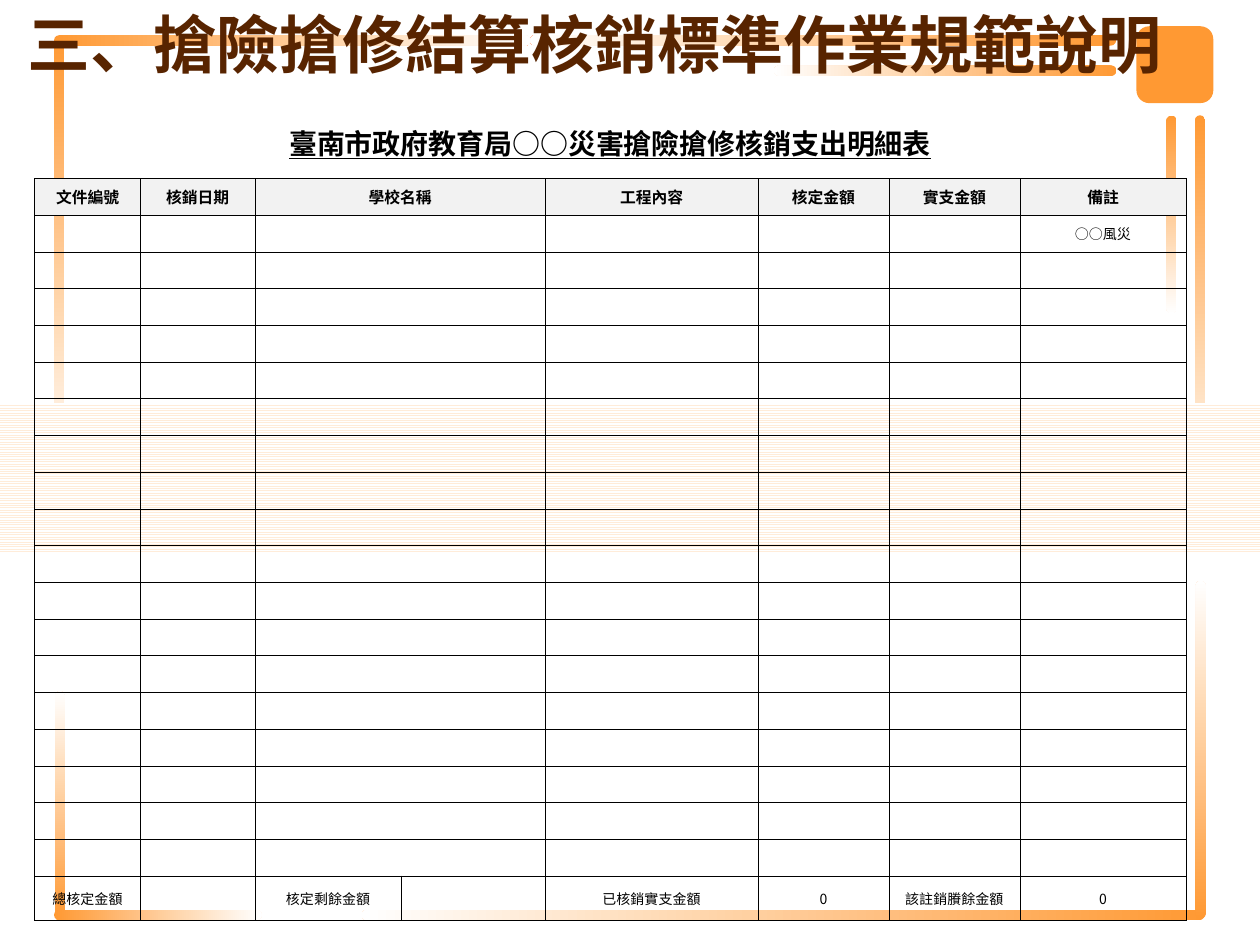
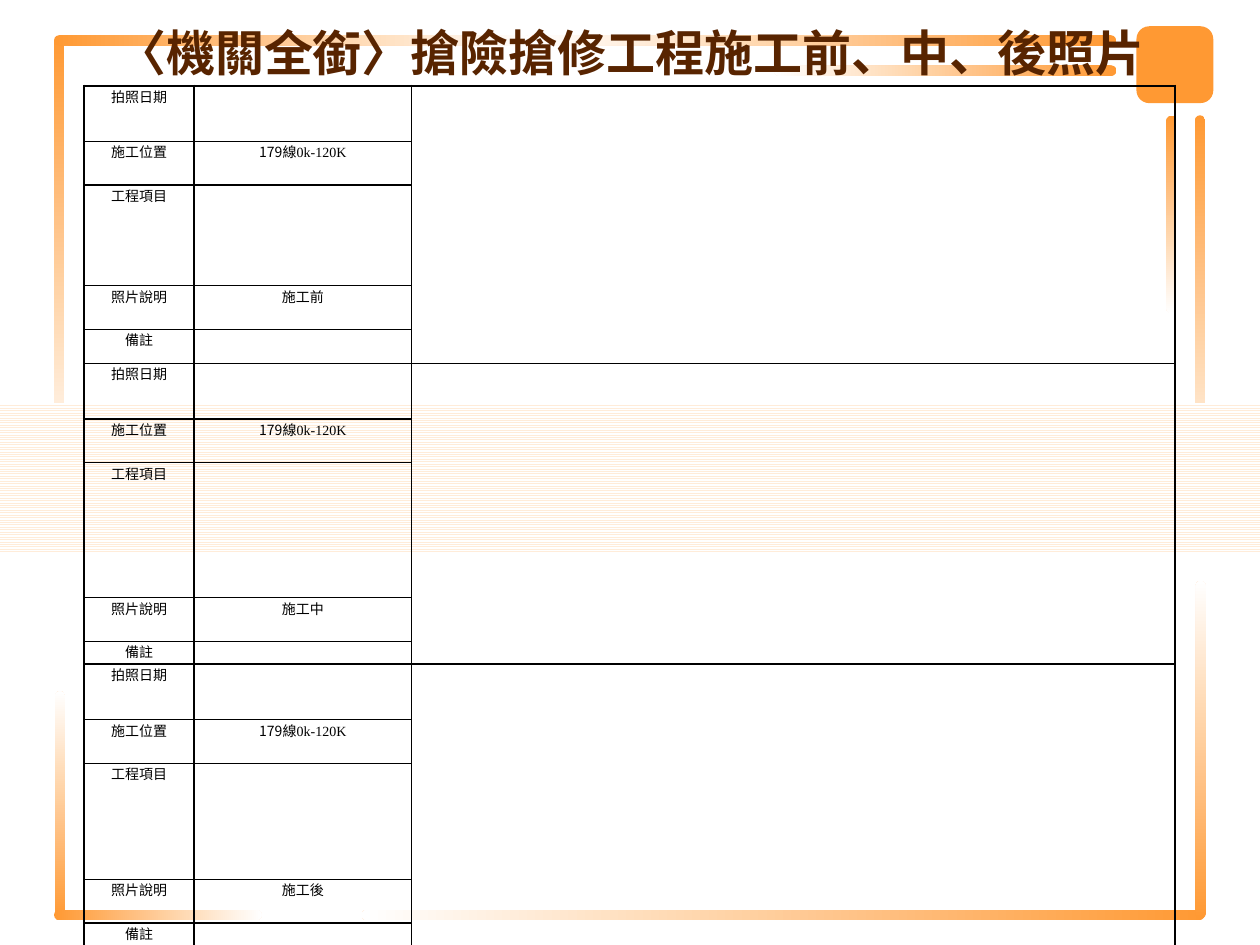
from lxml import etree
from pptx import Presentation
from pptx.dml.color import RGBColor
from pptx.enum.dml import MSO_PATTERN
from pptx.enum.shapes import MSO_SHAPE
from pptx.enum.text import MSO_ANCHOR, MSO_AUTO_SIZE, PP_ALIGN
from pptx.oxml.ns import qn
from pptx.util import Cm, Pt

ROUNDED, RECTANGLE = MSO_SHAPE.ROUNDED_RECTANGLE, MSO_SHAPE.RECTANGLE
LIGHT_HORIZONTAL = MSO_PATTERN.LIGHT_HORIZONTAL
MIDDLE, TOP = MSO_ANCHOR.MIDDLE, MSO_ANCHOR.TOP
LEFT, CENTER = PP_ALIGN.LEFT, PP_ALIGN.CENTER
NO_AUTOFIT = MSO_AUTO_SIZE.NONE

color = RGBColor.from_string
ORANGE, PALE_ORANGE, WHITE = "FF9933", "FFECD9", "FFFFFF"
BROWN, BLACK, HEADER_GRAY = "582400", "000000", "F2F2F2"
SANS, LATIN, SERIF = "Noto Sans CJK SC", "Arial", "Times New Roman"


def write(paragraph, text, size, name, ink=BLACK, bold=False, align=CENTER):
    if text:
        paragraph.add_run().text = text
    paragraph.alignment = align
    paragraph.font.size = Pt(size)
    paragraph.font.name = name
    paragraph.font.bold = bold
    paragraph.font.color.rgb = color(ink)
    etree.SubElement(paragraph._p, qn("a:endParaRPr"), sz=str(size * 100))


def add_grid(page, left, top, widths, heights, inner, outer, margin):
    frame = page.shapes.add_table(len(heights), len(widths), Cm(left), Cm(top),
                                  Cm(sum(widths)), Cm(sum(heights)))
    table = frame.table
    table.first_row = table.horz_banding = False
    for column, width in zip(table.columns, widths):
        column.width = Cm(width)
    for i, height in enumerate(heights):
        table.rows[i].height = Cm(height)
        for j in range(len(widths)):
            cell = table.cell(i, j)
            cell.margin_left = cell.margin_right = Cm(margin)
            cell.margin_top = cell.margin_bottom = 0
            on_edge = {"L": j == 0, "R": j == len(widths) - 1,
                       "T": i == 0, "B": i == len(heights) - 1}
            for side, is_outer in on_edge.items():
                line = etree.SubElement(cell._tc.get_or_add_tcPr(), qn(f"a:ln{side}"),
                                        w=str(Pt(outer if is_outer else inner)))
                solid = etree.SubElement(line, qn("a:solidFill"))
                etree.SubElement(solid, qn("a:srgbClr"), val=BLACK)
            cell.fill.background()
    return table


deck = Presentation()
deck.slide_width, deck.slide_height = Cm(25.4), Cm(19.05)
report_page = deck.slides.add_slide(deck.slide_layouts[5])
photo_page = deck.slides.add_slide(deck.slide_layouts[1])

# left, top, length, rotation
bars = [
    (-3.3, 5.13, 8.99, 90),
    (20.19, 6.22, 8, 90),
    (21.62, 4.22, 3.99, 90),
    (10.69, 0.71, 11.81, 180),
    (15.6, 1.32, 6.91, 180),
    (1.09, 0.71, 9.6, 0),
    (7.29, 18.34, 16.99, 180),
    (20.8, 15.01, 6.81, 270),
    (-1.09, 16.13, 4.6, 270),
    (1.09, 18.34, 4.19, 0),
]
decorations = []
for left, top, length, rotation in bars:
    bar = report_page.shapes.add_shape(ROUNDED, Cm(left), Cm(top), Cm(length), Cm(0.21))
    bar.adjustments[0] = 0.5
    bar.rotation = rotation
    bar.fill.gradient()
    bar.fill.gradient_angle = 0
    for stop, shade in zip(bar.fill.gradient_stops, (ORANGE, WHITE)):
        stop.color.rgb = color(shade)
    decorations.append(bar)

band = report_page.shapes.add_shape(RECTANGLE, 0, Cm(8.13), deck.slide_width, Cm(3))
band.fill.patterned()
band.fill.pattern = LIGHT_HORIZONTAL
band.fill.fore_color.rgb = color(PALE_ORANGE)
band.fill.back_color.rgb = color(WHITE)
corner = report_page.shapes.add_shape(ROUNDED, Cm(22.91), Cm(0.53), Cm(1.55), Cm(1.55))
corner.fill.solid()
corner.fill.fore_color.rgb = color(ORANGE)
decorations += [band, corner]

master_tree = deck.slide_master.shapes.element
for position, shape in enumerate(decorations, start=2):
    shape.line.fill.background()
    shape.shadow.inherit = False
    master_tree.insert(position, shape.element)

title = report_page.shapes.title
title.left, title.top, title.width, title.height = Cm(0.3), 0, Cm(24.8), Cm(1.73)
title.text_frame.auto_size = NO_AUTOFIT
title.text_frame.vertical_anchor = MIDDLE
write(title.text_frame.paragraphs[0], "三、搶險搶修結算核銷標準作業規範說明",
      36, SANS, BROWN, True, LEFT)

expense_rows = [["臺南市政府教育局○○災害搶險搶修核銷支出明細表"] + [""] * 7,
                ["文件編號", "核銷日期", "學校名稱", "", "工程內容", "核定金額", "實支金額", "備註"],
                [""] * 7 + ["○○風災"]]
expense_rows += [[""] * 8 for _ in range(17)]
expense_rows.append(["總核定金額", "", "核定剩餘金額", "", "已核銷實支金額", "0",
                     "該註銷賸餘金額", "0"])
expenses = add_grid(report_page, 0.7, 2.13, [2.13, 2.31, 2.95, 2.9, 4.29, 2.64, 2.64, 3.35],
                    [1.47] + [0.74] * 19 + [0.89], 0.5, 0.5, 0)
for i, texts in enumerate(expense_rows):
    for j, text in enumerate(texts):
        cell = expenses.cell(i, j)
        cell.vertical_anchor = MIDDLE
        write(cell.text_frame.paragraphs[0], text, {0: 16, 1: 9}.get(i, 8), SANS, bold=i < 2)
        if i == 0:
            cell.text_frame.paragraphs[0].font.underline = True
            for side in "LRT":
                line = cell._tc.tcPr.find(qn(f"a:ln{side}"))
                line.remove(line[0])
                etree.SubElement(line, qn("a:noFill"))
        if i == 1:
            cell.fill.solid()
            cell.fill.fore_color.rgb = color(HEADER_GRAY)
    if 0 < i < len(expense_rows) - 1:
        expenses.cell(i, 2).merge(expenses.cell(i, 3))
expenses.cell(0, 0).merge(expenses.cell(0, 7))

unused_title = photo_page.shapes.title.element
unused_title.getparent().remove(unused_title)
heading = photo_page.placeholders[1]
heading.left, heading.top, heading.width, heading.height = Cm(2.11), Cm(0.33), Cm(22.81), Cm(18.72)
heading.text_frame.auto_size = NO_AUTOFIT
heading.text_frame.vertical_anchor = TOP
heading_para = heading.text_frame.paragraphs[0]
write(heading_para, "〈機關全銜〉搶險搶修工程施工前、中、後照片", 28, LATIN, BROWN, True, LEFT)
properties = heading_para._p.get_or_add_pPr()
properties.set("marL", "0")
properties.set("indent", "0")
properties.insert(0, etree.Element(qn("a:buNone")))

labels = ["拍照日期", "施工位置", "工程項目", "照片說明", "備註"]
stages = [("施工前", 2.03, 0.69), ("施工中", 2.72, 0.46), ("施工後", 2.34, 0.46)]
photo_heights = []
for stage, item_height, remark_height in stages:
    photo_heights += [1.12, 0.88, item_height, 0.88, remark_height]
photos = add_grid(photo_page, 1.7, 1.73, [2.21, 4.39, 15.39], photo_heights, 1, 1.5, 0.13)
for block, (stage, _, _) in enumerate(stages):
    first = block * len(labels)
    for i, label in enumerate(labels):
        values = [label, {"施工位置": "179", "照片說明": stage}.get(label, ""), ""]
        for j, text in enumerate(values):
            write(photos.cell(first + i, j).text_frame.paragraphs[0], text, 8, SERIF)
    location = photos.cell(first + 1, 1).text_frame.paragraphs[0]
    location.runs[0].font.name = SANS
    location.add_run().text = "線0k-120K"
    photos.cell(first, 2).merge(photos.cell(first + len(labels) - 1, 2))

deck.save("out.pptx")
